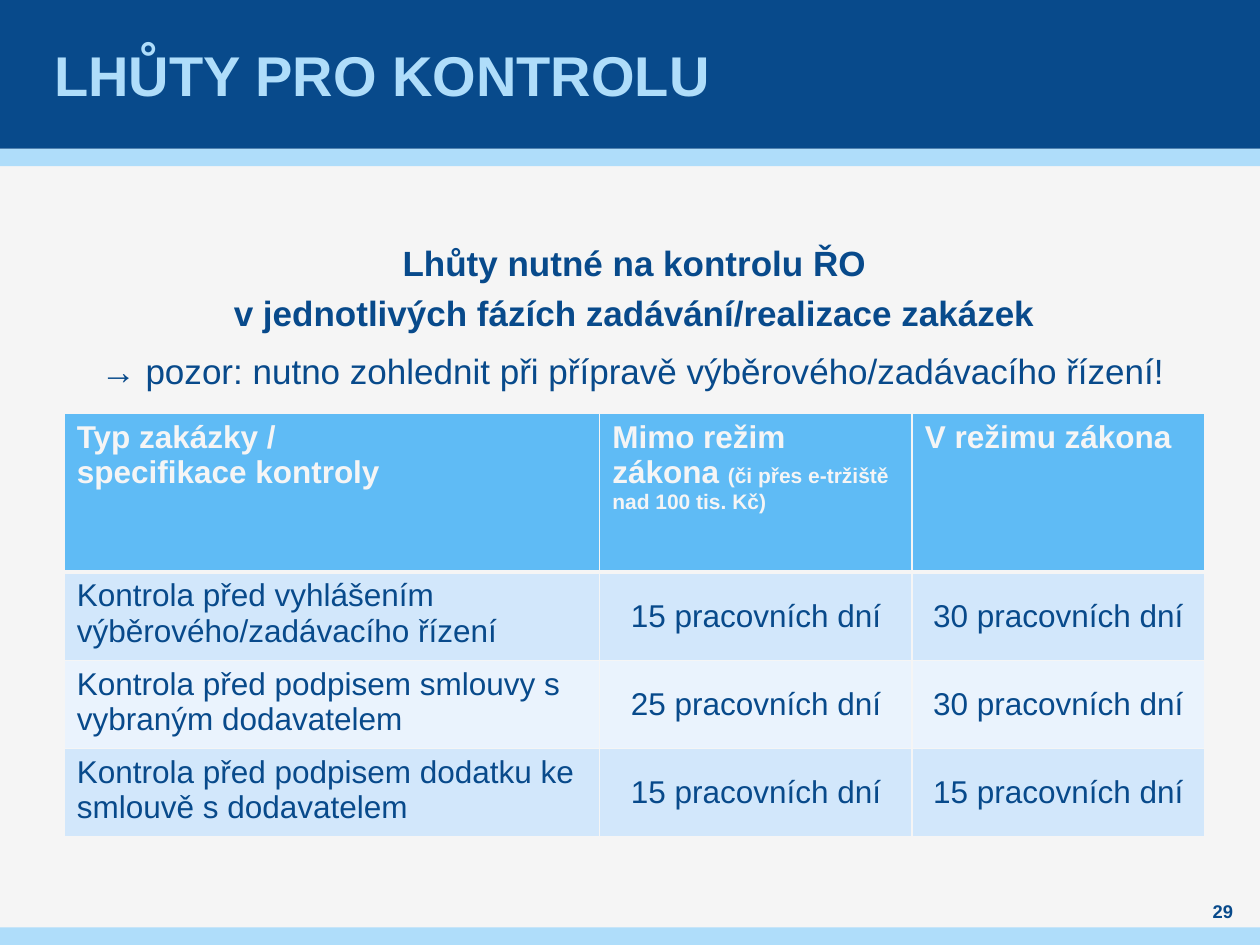
from pptx import Presentation
from pptx.dml.color import RGBColor
from pptx.enum.shapes import MSO_SHAPE as SHAPE
from pptx.enum.text import MSO_ANCHOR as ANCHOR, PP_ALIGN as ALIGN
from pptx.util import Inches, Pt
from lxml import etree

FONT = "Arial"
NAVY, PALE, SKY, PAPER = "084A8B", "AFDDFA", "5FBBF5", "F5F5F5"
BANDS = ["D2E7FB", "EAF3FD"]
NS = "http://schemas.openxmlformats.org/drawingml/2006/main"

HEADER = [
    [[("Typ zakázky /", 18)], [("specifikace kontroly", 18)]],
    [[("Mimo režim zákona ", 18), ("(či přes e-tržiště nad 100 tis. Kč)", 12)]],
    [[("V režimu zákona", 18)]],
]
ROWS = [
    ("Kontrola před vyhlášením výběrového/zadávacího řízení",
     "15 pracovních dní", "30 pracovních dní"),
    ("Kontrola před podpisem smlouvy s vybraným dodavatelem",
     "25 pracovních dní", "30 pracovních dní"),
    ("Kontrola před podpisem dodatku ke smlouvě s dodavatelem",
     "15 pracovních dní", "15 pracovních dní"),
]


def rgb(value):
    return RGBColor.from_string(value)


def set_borders(cell, **widths):
    """Draw the cell's borders; widths in points, keyed L, R, T, B."""
    tcPr = cell._tc.get_or_add_tcPr()
    for side, width in widths.items():
        ln = etree.SubElement(tcPr, f"{{{NS}}}ln{side}", w=str(Pt(width)))
        fill = etree.SubElement(ln, f"{{{NS}}}solidFill")
        etree.SubElement(fill, f"{{{NS}}}srgbClr", val=PAPER)


class Deck:
    """Holds the slide style and the current slide."""

    def __init__(self):
        self.prs = Presentation()
        self.prs.slide_width, self.prs.slide_height = Inches(10), Inches(7.5)
        self.s = self.prs.slides.add_slide(self.prs.slide_layouts[6])
        fill = self.s.background.fill
        fill.solid()
        fill.fore_color.rgb = rgb(PAPER)

    def bar(self, top, height, color):
        sp = self.s.shapes.add_shape(SHAPE.RECTANGLE, 0, Inches(top), Inches(10), Inches(height))
        sp.shadow.inherit = False
        sp.fill.solid()
        sp.fill.fore_color.rgb = rgb(color)
        sp.line.fill.background()

    def style(self, p, size, color=NAVY, bold=False, align=ALIGN.LEFT):
        p.alignment = align
        f = p.font
        f.name, f.size, f.bold = FONT, Pt(size), bold
        f.color.rgb = rgb(color)

    def text_box(self, left, top, width, height, anchor=ANCHOR.TOP, inset=0):
        tf = self.s.shapes.add_textbox(*map(Inches, (left, top, width, height))).text_frame
        tf.word_wrap = True
        tf.vertical_anchor = anchor
        tf.margin_left = tf.margin_right = Inches(inset)
        tf.margin_top = tf.margin_bottom = 0
        return tf

    def line(self, left, top, width, height, text, size, color, align, inset=0):
        """Add a box with one bold, vertically centred line."""
        p = self.text_box(left, top, width, height, ANCHOR.MIDDLE, inset).paragraphs[0]
        p.text = text
        self.style(p, size, color, True, align)

    def intro(self, heading, note):
        tf = self.text_box(0.35, 1.85, 9.37, 1.4)
        p = tf.paragraphs[0]
        p.text = heading
        self.style(p, 20, bold=True, align=ALIGN.CENTER)
        p.line_spacing, p.space_after = Pt(28.8), Pt(6)
        p = tf.add_paragraph()
        p.text = note
        self.style(p, 20)
        p.line_spacing, p.space_before = Pt(24), Pt(3)
        p._p.get_or_add_pPr().set("marL", str(Inches(0.45)))

    def header_cell(self, cell, paragraphs):
        tf = cell.text_frame
        for i, runs in enumerate(paragraphs):
            p = tf.add_paragraph() if i else tf.paragraphs[0]
            self.style(p, 18, PAPER, True)
            for text, size in runs:
                r = p.add_run()
                r.text = text
                r.font.size = Pt(size)

    def body_cell(self, cell, text, is_label):
        p = cell.text_frame.paragraphs[0]
        p.text = text
        self.style(p, 18, align=ALIGN.LEFT if is_label else ALIGN.CENTER)
        if not is_label:
            cell.vertical_anchor = ANCHOR.MIDDLE
            cell.margin_left = cell.margin_right = Inches(0.07)
            cell.margin_top = cell.margin_bottom = 0
            p.space_before = p.space_after = Pt(3)

    def table(self, left, top, col_widths, row_heights):
        frame = self.s.shapes.add_table(
            len(row_heights), len(col_widths), Inches(left), Inches(top),
            Inches(sum(col_widths)), Inches(sum(row_heights)))
        tbl = frame.table
        for col, width in zip(tbl.columns, col_widths):
            col.width = Inches(width)
        for row, height in zip(tbl.rows, row_heights):
            row.height = Inches(height)
        for i, content in enumerate([HEADER, *ROWS]):
            for j, value in enumerate(content):
                cell = tbl.cell(i, j)
                set_borders(cell, L=1, R=1, T=3 if i == 1 else 1, B=3 if i == 0 else 1)
                cell.fill.solid()
                cell.fill.fore_color.rgb = rgb(BANDS[(i - 1) % 2] if i else SKY)
                if i:
                    self.body_cell(cell, value, j == 0)
                else:
                    self.header_cell(cell, value)


def main():
    deck = Deck()
    deck.bar(1.18, 0.14, PALE)
    deck.bar(0, 1.18, NAVY)
    deck.bar(7.36, 0.14, PALE)
    deck.line(0.39, 0, 9.21, 1.18, "LHŮTY PRO KONTROLU", 32, PALE, ALIGN.LEFT, 0.04)
    deck.intro("Lhůty nutné na kontrolu ŘO\nv jednotlivých fázích zadávání/realizace zakázek",
               "→ pozor: nutno zohlednit při přípravě výběrového/zadávacího řízení!")
    deck.line(9.45, 7.13, 0.51, 0.2, "29", 10.5, NAVY, ALIGN.CENTER)
    deck.table(0.51, 3.28, [4.25, 2.48, 2.32], [1.26] + [0.66] * len(ROWS))
    deck.prs.save("out.pptx")


if __name__ == "__main__":
    main()
